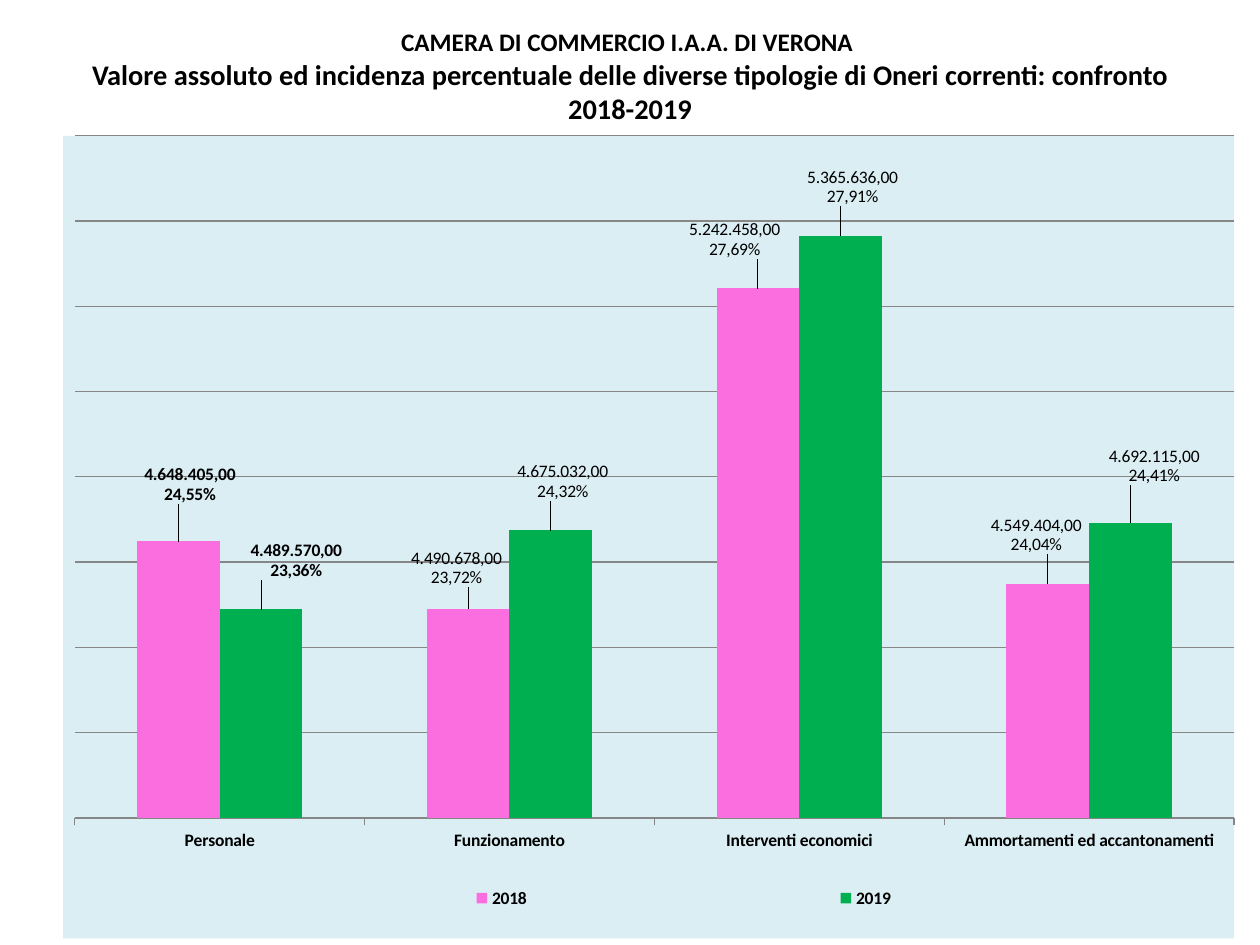
import dataclasses

import pptx
import pptx.chart.data
import pptx.dml.color
import pptx.enum.chart
import pptx.enum.text
import pptx.oxml
import pptx.oxml.ns
import pptx.util


@dataclasses.dataclass(frozen=True)
class Theme:
    font: str = "Calibri"
    ink: str = "000000"
    panel: str = "DBEEF4"
    grid: str = "868686"
    years: tuple = ("FA6EDF", "00B050")
    heading_size: float = 14.4
    subject_size: float = 16.2
    chart_size: float = 10


CATEGORIES = ["Personale", "Funzionamento", "Interventi economici",
              "Ammortamenti ed accantonamenti"]
# Each entry: amount, share of total, label shift as shares of the chart's size.
COSTS = {
    "2018": [(4648405, "24,55%", 0.01, -0.04), (4490678, "23,72%", -0.01, -0.02),
             (5242458, "27,69%", -0.02, -0.03), (4549404, "24,04%", -0.01, -0.03)],
    "2019": [(4489570, "23,36%", 0.03, -0.03), (4675032, "24,32%", 0.01, -0.03),
             (5365636, "27,91%", 0.01, -0.03), (4692115, "24,41%", 0.02, -0.04)],
}
BOLD_CATEGORY = "Personale"


def rgb(code):
    return pptx.dml.color.RGBColor.from_string(code)


def italian_amount(amount):
    return f"{amount:,}".replace(",", ".") + ",00"


def manual_layout(**settings):
    """Return a c:layout element with the given settings in schema order."""
    entries = "".join(f'<c:{name} val="{value}"/>' for name, value in settings.items())
    return pptx.oxml.parse_xml(
        f'<c:layout {pptx.oxml.ns.nsdecls("c")}>'
        f"<c:manualLayout>{entries}</c:manualLayout></c:layout>")


class Deck:
    def __init__(self, theme):
        self.theme = theme
        self.presentation = pptx.Presentation()
        self.presentation.slide_width = pptx.util.Inches(10)
        self.presentation.slide_height = pptx.util.Inches(7.5)
        self.slide = self.presentation.slides.add_slide(
            self.presentation.slide_layouts[5])

    def area(self, left, top, width, height):
        """Turn shares of the slide into lengths."""
        across, down = self.presentation.slide_width, self.presentation.slide_height
        return (int(left * across), int(top * down),
                int(width * across), int(height * down))

    def style(self, font, size, bold=False):
        font.name = self.theme.font
        font.size = pptx.util.Pt(size)
        font.bold = bold
        font.color.rgb = rgb(self.theme.ink)

    def title(self, lines, area):
        heading = self.slide.shapes.title
        heading.left, heading.top, heading.width, heading.height = self.area(*area)
        frame = heading.text_frame
        frame.word_wrap = True
        frame.auto_size = pptx.enum.text.MSO_AUTO_SIZE.NONE
        frame.vertical_anchor = pptx.enum.text.MSO_ANCHOR.MIDDLE
        paragraph = frame.paragraphs[0]
        paragraph.alignment = pptx.enum.text.PP_ALIGN.CENTER
        for number, (wording, size) in enumerate(lines):
            if number:
                paragraph.add_line_break()
            run = paragraph.add_run()
            run.text = wording
            self.style(run.font, size, bold=True)

    def column_chart(self, area):
        data = pptx.chart.data.CategoryChartData(number_format="#,##0.00")
        data.categories = CATEGORIES
        for year, costs in COSTS.items():
            data.add_series(year, [cost[0] for cost in costs])
        chart = self.slide.shapes.add_chart(
            pptx.enum.chart.XL_CHART_TYPE.COLUMN_CLUSTERED,
            *self.area(*area), data).chart
        chart.has_title = False
        self.style(chart.font, self.theme.chart_size)
        self.chart_panel(chart)
        self.axes(chart)
        self.legend(chart)
        plot = chart.plots[0]
        plot.gap_width = 150
        plot.overlap = 0
        plot.vary_by_categories = False
        for series, color, costs in zip(plot.series, self.theme.years, COSTS.values()):
            series.format.fill.solid()
            series.format.fill.fore_color.rgb = rgb(color)
            series.invert_if_negative = False
            self.cost_labels(series, costs)

    def chart_panel(self, chart):
        space = chart._chartSpace
        fill = pptx.oxml.parse_xml(
            f'<c:spPr {pptx.oxml.ns.nsdecls("c", "a")}><a:solidFill>'
            f'<a:srgbClr val="{self.theme.panel}"/></a:solidFill>'
            "<a:ln><a:noFill/></a:ln></c:spPr>")
        space.chart.addnext(fill)
        plot_area = space.chart.plotArea
        for old in plot_area.findall(pptx.oxml.ns.qn("c:layout")):
            plot_area.remove(old)
        plot_area.insert(0, manual_layout(
            layoutTarget="inner", xMode="edge", yMode="edge",
            x=0.01, y=0, w=0.99, h=0.85))

    def axes(self, chart):
        amounts, kinds = chart.value_axis, chart.category_axis
        amounts.minimum_scale, amounts.maximum_scale = 4000000, 5600000
        amounts.major_unit = 200000
        amounts.has_major_gridlines = True
        amounts.visible = False
        kinds.major_tick_mark = pptx.enum.chart.XL_TICK_MARK.OUTSIDE
        self.style(kinds.tick_labels.font, self.theme.chart_size, bold=True)
        for line in (amounts.major_gridlines.format.line, kinds.format.line):
            line.color.rgb = rgb(self.theme.grid)
            line.width = pptx.util.Pt(0.75)

    def legend(self, chart):
        chart.has_legend = True
        legend = chart.legend
        legend.position = pptx.enum.chart.XL_LEGEND_POSITION.RIGHT
        legend.include_in_layout = False
        self.style(legend.font, self.theme.chart_size, bold=True)
        element = legend._element
        for old in element.findall(pptx.oxml.ns.qn("c:layout")):
            element.remove(old)
        element.find(pptx.oxml.ns.qn("c:legendPos")).addnext(manual_layout(
            xMode="edge", yMode="edge", x=0.09, y=0.92, w=0.88, h=0.06))

    def cost_labels(self, series, costs):
        labels = series.data_labels
        labels.show_value = True
        labels.number_format = "#,##0.00"
        labels.number_format_is_linked = False
        self.style(labels.font, self.theme.chart_size, bold=True)
        for number, (amount, share, across, down) in enumerate(costs):
            label = series.points[number].data_label
            frame = label.text_frame
            for wording, paragraph in ((italian_amount(amount), frame.paragraphs[0]),
                                       (share, frame.add_paragraph())):
                run = paragraph.add_run()
                run.text = wording
                self.style(run.font, self.theme.chart_size,
                           CATEGORIES[number] == BOLD_CATEGORY)
            label.position = pptx.enum.chart.XL_LABEL_POSITION.OUTSIDE_END
            index = labels._element.xpath(f"c:dLbl/c:idx[@val='{number}']")[0]
            index.addnext(manual_layout(x=across, y=down))


def main():
    theme = Theme()
    deck = Deck(theme)
    deck.title([
        ("CAMERA DI COMMERCIO I.A.A. DI VERONA ", theme.heading_size),
        ("Valore assoluto ed incidenza percentuale delle diverse tipologie di "
         "Oneri correnti: confronto 2018-2019", theme.subject_size),
    ], area=(0.05, 0.04, 0.9, 0.08))
    deck.column_chart(area=(0.05, 0.143, 0.93, 0.85))
    deck.presentation.save("out.pptx")


if __name__ == "__main__":
    main()
